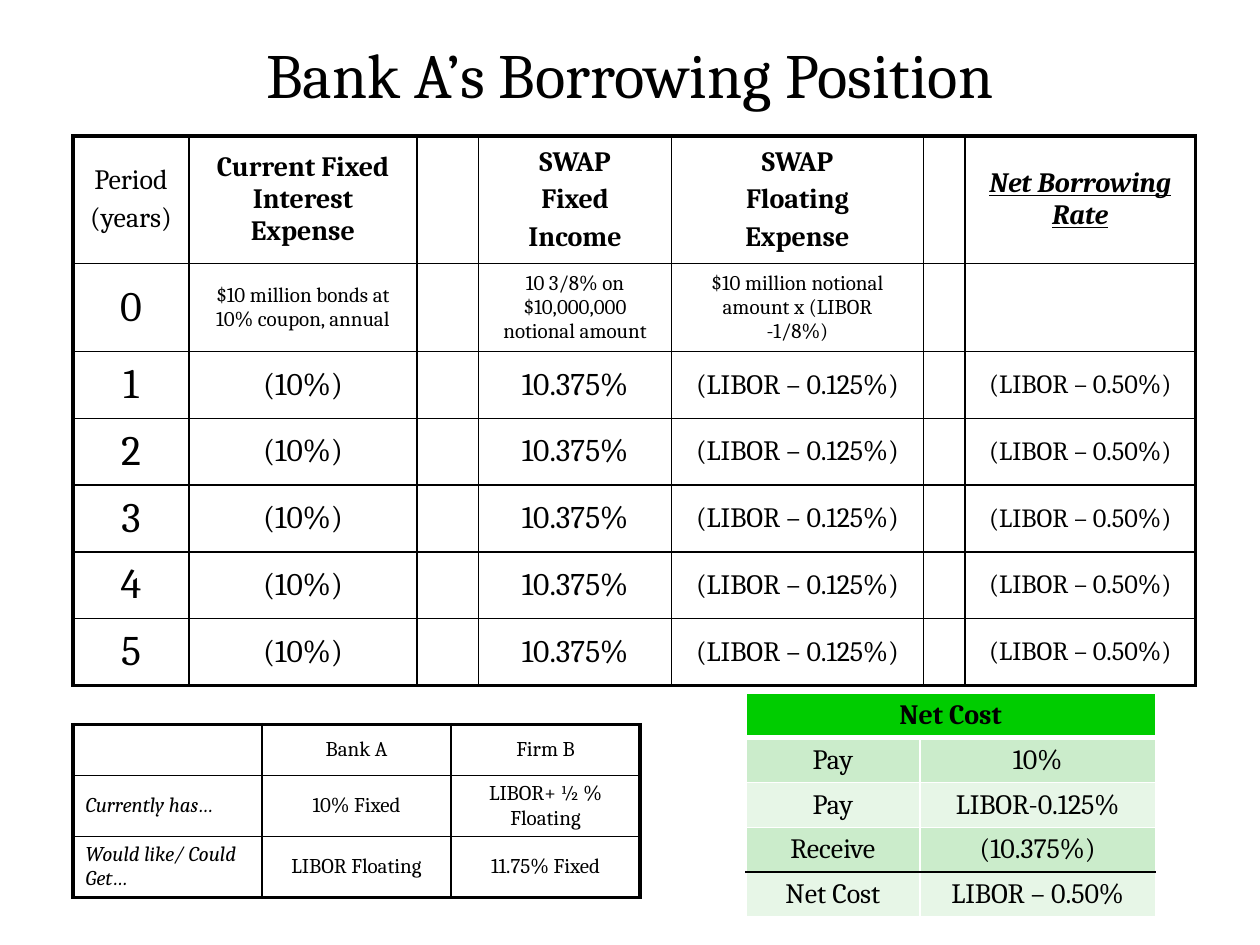
"""Build the slide on Bank A's borrowing position in an interest rate swap."""
from lxml.etree import SubElement
from pptx import Presentation
from pptx.dml.color import RGBColor
from pptx.enum.text import MSO_ANCHOR, PP_ALIGN
from pptx.oxml.ns import qn
from pptx.util import Inches, Pt

BLACK = RGBColor(0x00, 0x00, 0x00)
WHITE = RGBColor(0xFF, 0xFF, 0xFF)
GREEN = RGBColor(0x00, 0xCC, 0x00)
LIGHT_GREEN = RGBColor(0xCB, 0xEC, 0xCB)
PALE_GREEN = RGBColor(0xE7, 0xF6, 0xE7)
FONT = "Cambria"


def add_plain_table(page, left, top, widths, heights):
    """Add a table without banding and size its columns and rows."""
    frame = page.shapes.add_table(
        len(heights), len(widths), Inches(left), Inches(top),
        Inches(sum(widths)), Inches(sum(heights)))
    table = frame.table
    table.first_row = table.horz_banding = False
    for column, width in zip(table.columns, widths):
        column.width = Inches(width)
    for row, height in zip(table.rows, heights):
        row.height = Inches(height)
    return table


def format_cell(cell, text, size, borders, fill=None, bold=False, italic=False,
                underline=False, align=PP_ALIGN.CENTER, spacing=0.2):
    """Write a cell and set its left, right, top and bottom borders."""
    properties = cell._tc.get_or_add_tcPr()
    for side, (color, width) in zip("LRTB", borders):
        line = SubElement(properties, qn(f"a:ln{side}"), w=str(Pt(width)))
        solid = SubElement(line, qn("a:solidFill"))
        SubElement(solid, qn("a:srgbClr"), val=str(color))
    if fill is None:
        cell.fill.background()
    else:
        cell.fill.solid()
        cell.fill.fore_color.rgb = fill
    cell.vertical_anchor = MSO_ANCHOR.MIDDLE
    if not text:
        return
    for index, content in enumerate(text.split("\n")):
        frame = cell.text_frame
        para = frame.add_paragraph() if index else frame.paragraphs[0]
        para.alignment = align
        para.space_before = Pt(size * spacing)
        for part, words in enumerate(content.split("\v")):
            if part:
                para.add_line_break()
            span = para.add_run()
            span.text = words
            span.font.name = FONT
            span.font.size = Pt(size)
            span.font.color.rgb = BLACK
            span.font.bold = bold
            span.font.italic = italic
            span.font.underline = underline


deck = Presentation()
deck.slide_width, deck.slide_height = Inches(10), Inches(7.5)
page = deck.slides.add_slide(deck.slide_layouts[5])

title = page.shapes.title
title.left, title.top = Inches(0.75), Inches(0.08)
title.width, title.height = Inches(8.5), Inches(1)
title.text_frame.vertical_anchor = MSO_ANCHOR.MIDDLE
para = title.text_frame.paragraphs[0]
para.alignment = PP_ALIGN.CENTER
span = para.add_run()
span.text = "Bank A’s Borrowing Position"
span.font.name = FONT
span.font.size = Pt(36)
span.font.color.rgb = BLACK

swap_rows = [
    ["Period\n(years)", "Current Fixed Interest Expense", "", "SWAP\nFixed\nIncome",
     "SWAP\nFloating\nExpense", "", "Net Borrowing Rate"],
    ["0", "$10 million bonds at 10% coupon, annual", "",
     "10 3/8% on $10,000,000 notional amount",
     "$10 million notional\vamount x (LIBOR\v-1/8%)", "", ""],
]
for year in range(1, 6):
    swap_rows.append([str(year), "(10%)", "", "10.375%", "(LIBOR – 0.125%)", "",
                      "(LIBOR – 0.50%)"])
swap_sizes = [[16] * 7, [24] + [12] * 6] + [[24, 18, 18, 18, 16, 16, 15]] * 5
swap_table = add_plain_table(page, 0.58, 1.08, [0.92, 1.81, 0.49, 1.53, 2, 0.33, 1.83],
                             [1.01, 0.7] + [0.53] * 5)

needs_rows = [
    ["", "Bank A", "Firm B"],
    ["Currently has…", "10% Fixed", "LIBOR+ ½ % Floating"],
    ["Would like/ Could Get…", "LIBOR Floating", "11.75% Fixed"],
]
needs_sizes = [[12] * 3] * 3
needs_table = add_plain_table(page, 0.58, 5.75, [1.5] * 3, [0.39, 0.39, 0.47])

for table, rows, sizes in ((swap_table, swap_rows, swap_sizes),
                           (needs_table, needs_rows, needs_sizes)):
    last_row, last_column = len(rows) - 1, len(rows[0]) - 1
    for r, row in enumerate(rows):
        for c, text in enumerate(row):
            outer_sides = (c == 0, c == last_column, r == 0, r == last_row)
            borders = [(BLACK, 2.25 if outer else 1) for outer in outer_sides]
            swap_heading = table is swap_table and r == 0
            row_label = table is needs_table and c == 0
            net_heading = swap_heading and c == last_column
            format_cell(table.cell(r, c), text, sizes[r][c], borders,
                        bold=swap_heading and c > 0,
                        italic=net_heading or row_label, underline=net_heading,
                        align=PP_ALIGN.LEFT if row_label else PP_ALIGN.CENTER)

cost_rows = [
    ["Net Cost", ""],
    ["Pay", "10%"],
    ["Pay", "LIBOR-0.125%"],
    ["Receive", "(10.375%)"],
    ["Net Cost", "LIBOR – 0.50%"],
]
cost_fills = [GREEN, LIGHT_GREEN, PALE_GREEN, LIGHT_GREEN, PALE_GREEN]
cost_lines = [(WHITE, 1), (WHITE, 3), (WHITE, 1), (WHITE, 1), (BLACK, 1), (WHITE, 1)]
cost_table = add_plain_table(page, 5.92, 5.5, [1.38, 1.87], [0.35] * 5)
cost_table.cell(0, 0).merge(cost_table.cell(0, 1))
for r, row in enumerate(cost_rows):
    for c, text in enumerate(row):
        borders = [(WHITE, 1), (WHITE, 1), cost_lines[r], cost_lines[r + 1]]
        format_cell(cost_table.cell(r, c), text, 16, borders, cost_fills[r],
                    bold=r == 0, spacing=0)

deck.save("out.pptx")
